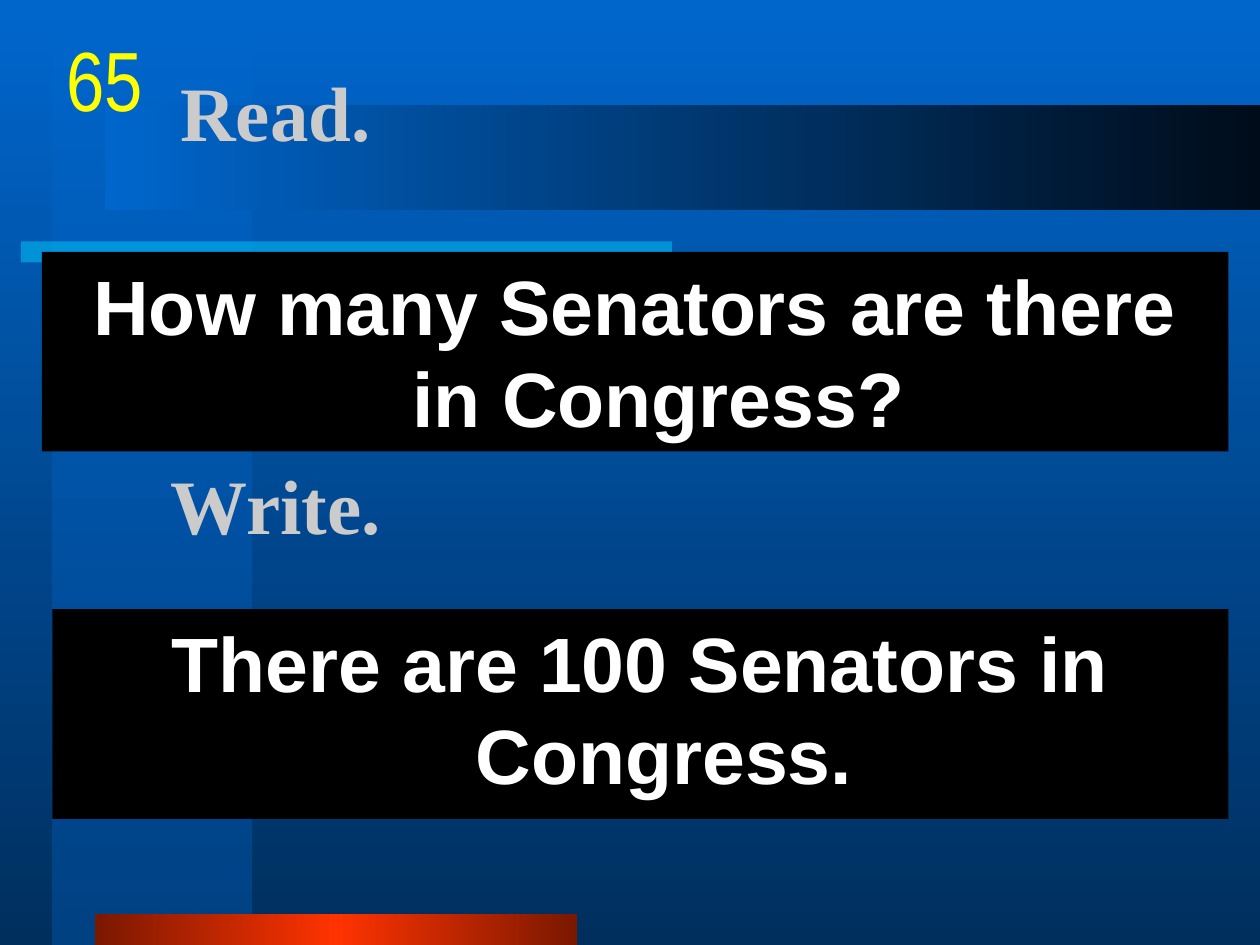
from lxml.etree import SubElement
from pptx import Presentation
from pptx.dml.color import RGBColor as RGB
from pptx.enum.shapes import MSO_SHAPE as Shape
from pptx.enum.text import MSO_ANCHOR as Anchor, PP_ALIGN as Align
from pptx.oxml.ns import qn
from pptx.util import Pt


class Theme:
    blue, navy, strip_end, midnight = "0066CC", "002F5E", "0053A6", "000C1A"
    cyan, red, dark_red = "00CCFF", "FF3300", "7A1800"
    black, white, silver, yellow = "000000", "FFFFFF", "CBCBCB", "FFFF00"
    serif, sans, narrow = "Times New Roman", "Arial", "Arial Narrow"
    body_size, number_size = 44, 48


ACROSS, DOWN = 0, 270

# Box (left, top, width, height), colours from start to end, angle, opacity in percent
DECORATIONS = [
    ((30, 0, 114, 540), (Theme.blue, Theme.strip_end), DOWN, 50),
    ((12, 138, 372, 12), (Theme.cyan, Theme.cyan), ACROSS, 50),
    ((54, 522, 276, 18), (Theme.dark_red, Theme.red, Theme.dark_red), ACROSS, 100),
    ((60, 60, 660, 60), (Theme.blue, Theme.midnight), ACROSS, 100),
]

PROMPT = dict(font=Theme.serif, color=Theme.silver, anchor=Anchor.MIDDLE)
PANEL = dict(font=Theme.sans, color=Theme.white, align=Align.CENTER,
             fill=Theme.black, hanging=27, before_percent=20)
NUMBER = dict(font=Theme.narrow, color=Theme.yellow, size=Theme.number_size,
              bold=False, align=Align.CENTER, wrap=False, side_inset=0)

TEXTS = [
    ("Read.", (96, 18, 612, 90), PROMPT),
    ("How many Senators are there in Congress?", (24, 144, 678, 114), PANEL),
    ("Write.", (90.5, 228, 612, 120), PROMPT),
    ("There are 100 Senators in Congress.", (30, 348, 672, 120), PANEL),
    ("65", (35, 12, 50, 60), NUMBER),
]


def points(box):
    return [Pt(length) for length in box]


def paint_gradient(fill, element, colors, angle, opacity=100):
    """Spread the colours evenly over the gradient fill held in element."""
    fill.gradient()
    fill.gradient_angle = angle
    stops = element.find(".//" + qn("a:gsLst"))
    for stop in list(stops):
        stops.remove(stop)
    for index, color in enumerate(colors):
        position = 100000 * index // (len(colors) - 1)
        stop = SubElement(stops, qn("a:gs"), pos=str(position))
        tint = SubElement(stop, qn("a:srgbClr"), val=color)
        if opacity < 100:
            SubElement(tint, qn("a:alpha"), val=str(opacity * 1000))


def add_decoration(slide, box, colors, angle, opacity):
    bar = slide.shapes.add_shape(Shape.RECTANGLE, *points(box))
    bar.shadow.inherit = False
    bar.line.fill.background()
    paint_gradient(bar.fill, bar.element, colors, angle, opacity)


def add_text(slide, text, box, *, font, color, size=Theme.body_size, bold=True,
             align=Align.LEFT, anchor=Anchor.TOP, fill=None, wrap=True,
             side_inset=7.2, hanging=0, before_percent=0):
    holder = slide.shapes.add_textbox(*points(box))
    if fill:
        holder.fill.solid()
        holder.fill.fore_color.rgb = RGB.from_string(fill)
    frame = holder.text_frame
    frame.word_wrap = wrap
    frame.vertical_anchor = anchor
    frame.margin_left = frame.margin_right = Pt(side_inset)
    paragraph = frame.paragraphs[0]
    paragraph.alignment = align
    properties = holder.element.find(".//" + qn("a:pPr"))
    if hanging:
        properties.set("marL", str(Pt(hanging)))
        properties.set("indent", str(-Pt(hanging)))
    if before_percent:
        before = SubElement(properties, qn("a:spcBef"))
        SubElement(before, qn("a:spcPct"), val=str(before_percent * 1000))
    run = paragraph.add_run()
    run.text = text
    run.font.name = font
    run.font.size = Pt(size)
    run.font.bold = bold
    run.font.color.rgb = RGB.from_string(color)


def main():
    deck = Presentation()
    deck.slide_width, deck.slide_height = Pt(720), Pt(540)
    slide = deck.slides.add_slide(deck.slide_layouts[6])
    paint_gradient(slide.background.fill, slide.element, (Theme.blue, Theme.navy), DOWN)
    for decoration in DECORATIONS:
        add_decoration(slide, *decoration)
    for text, box, style in TEXTS:
        add_text(slide, text, box, **style)
    deck.save("out.pptx")


if __name__ == "__main__":
    main()
